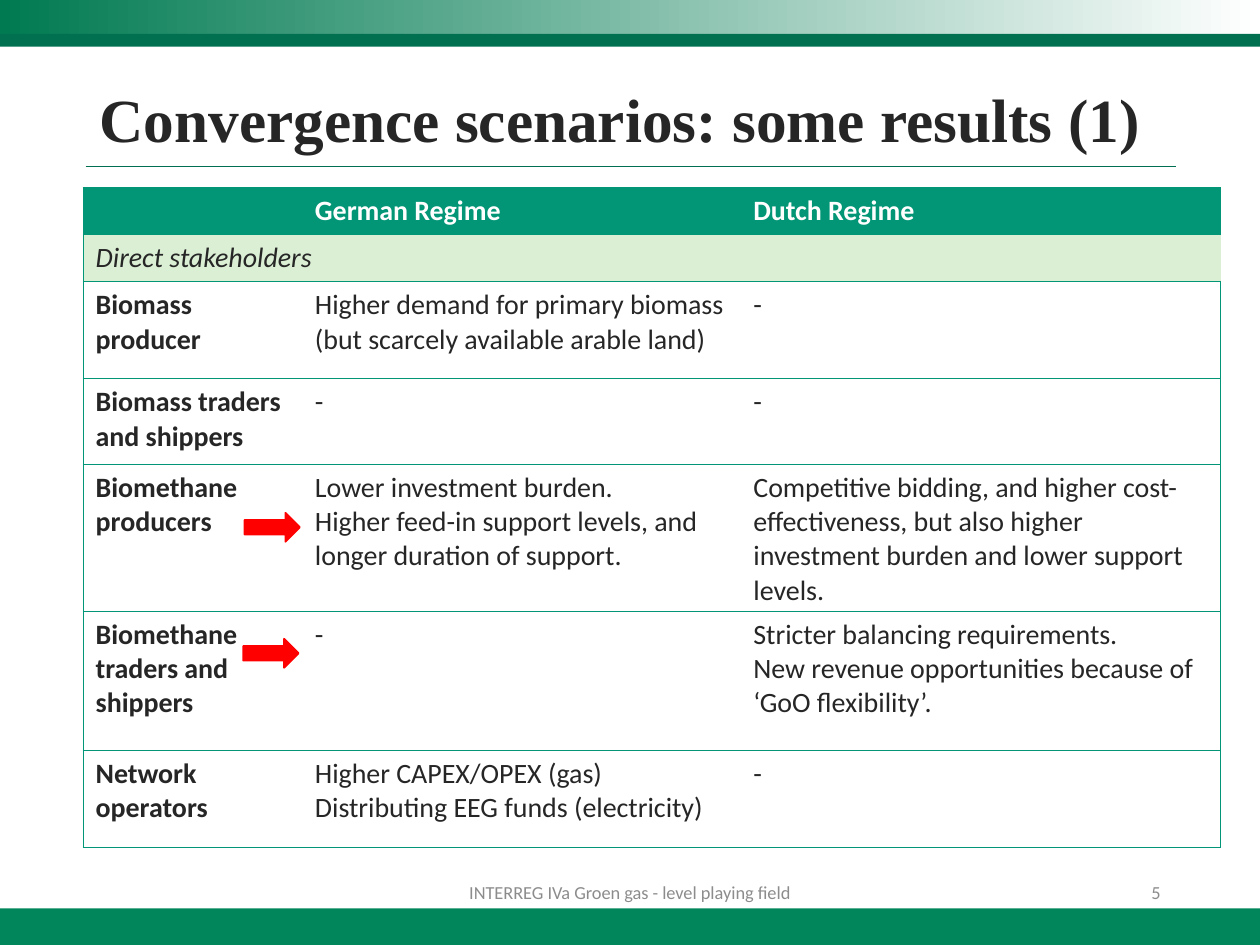
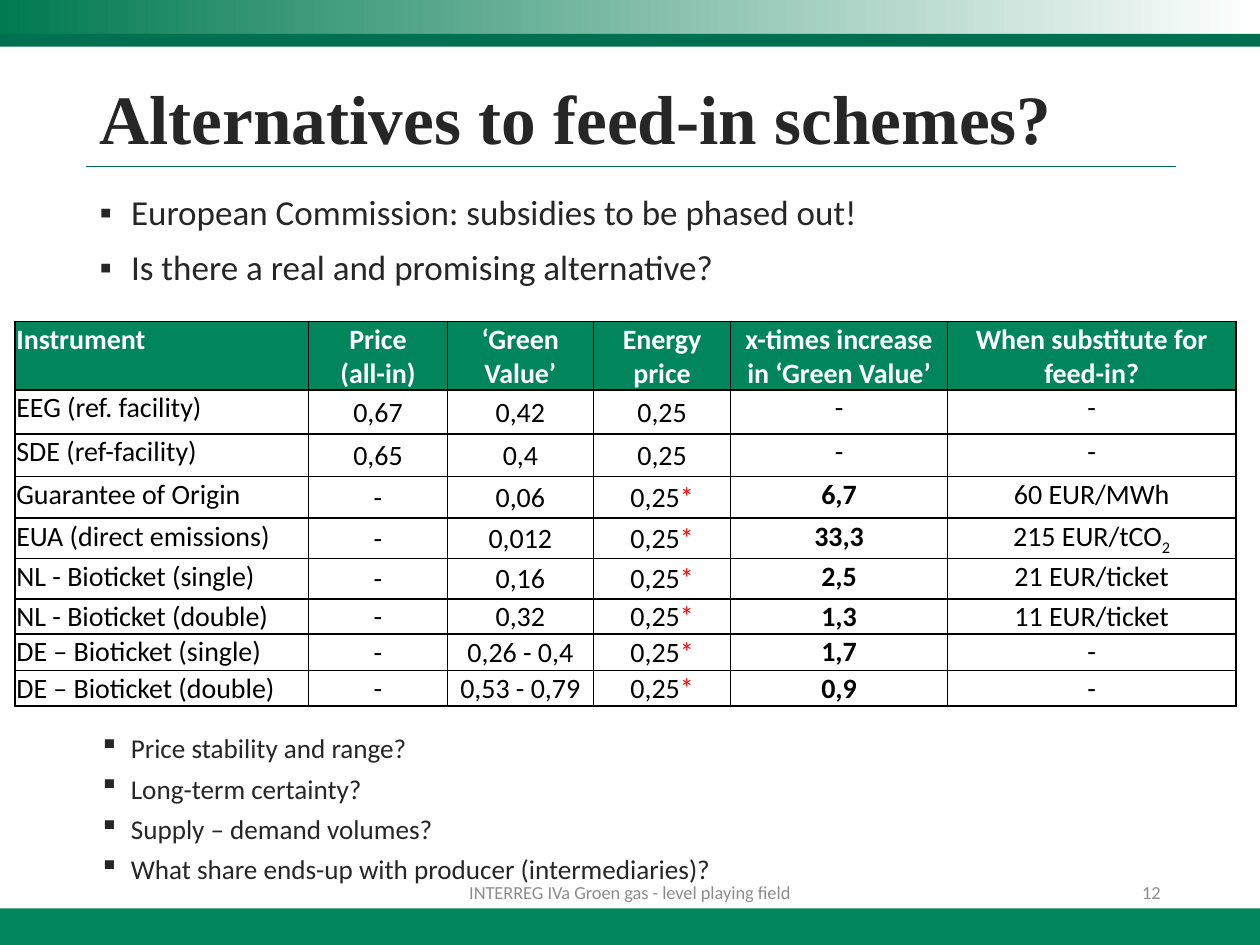
"""Builds two slides on convergence scenarios and alternatives to feed-in schemes."""
from dataclasses import dataclass

from lxml.etree import SubElement
from pptx import Presentation
from pptx.dml.color import RGBColor
from pptx.enum.shapes import MSO_CONNECTOR, MSO_SHAPE
from pptx.enum.text import MSO_ANCHOR, MSO_AUTO_SIZE, PP_ALIGN
from pptx.oxml.ns import qn
from pptx.util import Inches, Pt


@dataclass(frozen=True)
class Theme:
    heading_font: str = "Times New Roman"
    text_font: str = "Calibri"
    ink: str = "262626"
    black: str = "000000"
    white: str = "FFFFFF"
    muted: str = "8C8C8C"
    accent: str = "FF0000"
    green: str = "00865A"
    deep_green: str = "007051"
    fade_green: str = "007A51"
    teal: str = "029676"
    pale_green: str = "DBEFD4"
    table_size: float = 16
    footer_size: float = 10.5
    list_size: float = 20
    small_list_size: float = 15.5


THEME = Theme()
COLUMNS, ROWS = 100, 75
PLAIN_TABLE = "{2D5ABB26-0587-4C30-8999-92F81FD0307C}"
FOOTER = "INTERREG IVa Groen gas - level playing field"

REGIMES = [
    ["", "German Regime", "Dutch Regime"],
    ["Direct stakeholders", "", ""],
    ["Biomass producer", "Higher demand for primary biomass (but scarcely available arable land)", "-"],
    ["Biomass traders and shippers", "-", "-"],
    ["Biomethane producers",
     "Lower investment burden.\vHigher feed-in support levels, and longer duration of support.",
     "Competitive bidding, and higher cost-effectiveness, but also higher investment burden "
     "and lower support levels."],
    ["Biomethane traders and shippers", "-",
     "Stricter balancing requirements.\vNew revenue opportunities because of ‘GoO flexibility’."],
    ["Network operators", "Higher CAPEX/OPEX (gas)\nDistributing EEG funds (electricity)", "-"],
]

INSTRUMENTS = [
    ["Instrument", "Price\n(all-in)", "‘Green Value’", "Energy price",
     "x-times increase in ‘Green Value’", "When substitute for feed-in?"],
    ["EEG (ref. facility)", "0,67", "0,42", "0,25", "-", "-"],
    ["SDE (ref-facility)", "0,65", "0,4", "0,25", "-", "-"],
    ["Guarantee of Origin", "-", "0,06", "0,25", "6,7", "60 EUR/MWh"],
    ["EUA (direct emissions)", "-", "0,012", "0,25", "33,3", "215 EUR/tCO"],
    ["NL - Bioticket (single)", "-", "0,16", "0,25", "2,5", "21 EUR/ticket"],
    ["NL - Bioticket (double)", "-", "0,32", "0,25", "1,3", "11 EUR/ticket"],
    ["DE – Bioticket (single)", "-", "0,26 - 0,4", "0,25", "1,7", "-"],
    ["DE – Bioticket (double)", "-", "0,53 - 0,79", "0,25", "0,9", "-"],
]


class Deck:
    def __init__(self, theme):
        self.theme = theme
        self.file = Presentation()
        self.file.slide_width, self.file.slide_height = Inches(10), Inches(7.5)
        self.slide = None

    def x(self, columns):
        return round(self.file.slide_width * columns / COLUMNS)

    def y(self, rows):
        return round(self.file.slide_height * rows / ROWS)

    def box(self, left, top, width, height):
        return self.x(left), self.y(top), self.x(width), self.y(height)

    def style(self, paragraph, size, color, bold=False, italic=False, font=None, align=PP_ALIGN.LEFT):
        paragraph.alignment = align
        face = paragraph.font
        face.name, face.size = font or self.theme.text_font, Pt(size)
        face.bold, face.italic = bold, italic
        face.color.rgb = RGBColor.from_string(color)

    def start(self, layout, heading, heading_size, number):
        self.slide = self.file.slides.add_slide(self.file.slide_layouts[layout])
        self.bands()
        title = self.slide.shapes.title
        title.left, title.top, title.width, title.height = self.box(6.9, 6.2, 86.2, 7)
        frame = title.text_frame
        frame.text = heading
        frame.auto_size, frame.vertical_anchor = MSO_AUTO_SIZE.NONE, MSO_ANCHOR.MIDDLE
        frame.paragraphs[0].line_spacing = 0.9
        self.style(frame.paragraphs[0], heading_size, self.theme.ink, bold=True, font=self.theme.heading_font)
        self.footer(FOOTER, 33.1, 33.8, PP_ALIGN.CENTER)
        self.footer(number, 70.6, 22.5, PP_ALIGN.RIGHT)

    def bands(self):
        theme = self.theme
        self.shape(MSO_SHAPE.RECTANGLE, (0, 72.1, 100, 2.9), theme.green)
        fade = self.shape(MSO_SHAPE.RECTANGLE, (0, 0, 100, 2.9), theme.white).fill
        fade.gradient()
        fade.gradient_angle = 0
        for stop, color in zip(fade.gradient_stops, (theme.fade_green, theme.white)):
            stop.color.rgb = RGBColor.from_string(color)
        self.shape(MSO_SHAPE.RECTANGLE, (0, 2.7, 100, 1), theme.deep_green)
        self.rule(6.8, 93.3, 13.2)

    def shape(self, preset, place, color, outline=None):
        shape = self.slide.shapes.add_shape(preset, *self.box(*place))
        shape.shadow.inherit = False
        shape.fill.solid()
        shape.fill.fore_color.rgb = RGBColor.from_string(color)
        if outline:
            shape.line.color.rgb = RGBColor.from_string(color)
            shape.line.width = Pt(outline)
        else:
            shape.line.fill.background()
        return shape

    def rule(self, start, end, row):
        line = self.slide.shapes.add_connector(
            MSO_CONNECTOR.STRAIGHT, self.x(start), self.y(row), self.x(end), self.y(row))
        line.line.color.rgb = RGBColor.from_string(self.theme.deep_green)
        line.line.width = Pt(0.5)
        SubElement(line._element.spPr, qn("a:effectLst"))

    def text_box(self, place):
        frame = self.slide.shapes.add_textbox(*self.box(*place)).text_frame
        frame.word_wrap = True
        return frame

    def footer(self, text, left, width, align):
        frame = self.text_box((left, 69.5, width, 2.6))
        frame.text, frame.vertical_anchor = text, MSO_ANCHOR.MIDDLE
        self.style(frame.paragraphs[0], self.theme.footer_size, self.theme.muted, align=align)

    def body(self, place):
        body = self.slide.placeholders[1]
        body.left, body.top, body.width, body.height = self.box(*place)
        return body.text_frame

    def bullets(self, frame, items, size, spacing):
        frame.text = "\n".join(items)
        frame.auto_size = MSO_AUTO_SIZE.NONE
        for paragraph in frame.paragraphs:
            paragraph.line_spacing, paragraph.space_before = spacing, Pt(10)
            self.style(paragraph, size, self.theme.ink)
            properties = paragraph._p.get_or_add_pPr()
            properties.set("marL", str(Inches(0.25)))
            properties.set("indent", str(-Inches(0.25)))
            bullet = properties.makeelement(qn("a:buChar"), {"char": "▪"})
            properties.find(qn("a:defRPr")).addprevious(bullet)

    def borders(self, cell, sides, color, width):
        properties = cell._tc.get_or_add_tcPr()
        for side in "LRTB":
            if side in sides:
                line = SubElement(properties, qn(f"a:ln{side}"), w=str(Pt(width)))
                SubElement(SubElement(line, qn("a:solidFill")), qn("a:srgbClr"), val=color)

    def table(self, content, left, top, widths, heights, look, border, insets=None):
        place = self.box(left, top, sum(widths), sum(heights))
        table = self.slide.shapes.add_table(len(content), len(widths), *place).table
        table._tbl.tblPr.find(qn("a:tableStyleId")).text = PLAIN_TABLE
        table.horz_banding = False
        for column, width in zip(table.columns, widths):
            column.width = self.x(width)
        for r, texts in enumerate(content):
            table.rows[r].height = self.y(heights[r])
            for c, text in enumerate(texts):
                sides, fill, anchor, font = look(r, c)
                cell = table.cell(r, c)
                cell.text, cell.vertical_anchor = text, anchor
                if insets:
                    cell.margin_left, cell.margin_right, cell.margin_top, cell.margin_bottom = insets
                self.borders(cell, sides, *border)
                if fill:
                    cell.fill.solid()
                    cell.fill.fore_color.rgb = RGBColor.from_string(fill)
                else:
                    cell.fill.background()
                for paragraph in cell.text_frame.paragraphs:
                    self.style(paragraph, self.theme.table_size, **font)
        return table

    def tail(self, cell, text, color=None, baseline=None):
        run = cell.text_frame.paragraphs[0].add_run()
        run.text = text
        if color:
            run.font.color.rgb = RGBColor.from_string(color)
        if baseline:
            run.font._element.set("baseline", str(baseline * 1000))


def regime_look(row, column):
    sides = "TB" + {0: "L", 2: "R"}.get(column, "")
    fill = {0: THEME.teal, 1: THEME.pale_green}.get(row)
    anchor = MSO_ANCHOR.MIDDLE if row == 1 else MSO_ANCHOR.TOP
    font = {"color": THEME.ink if row else THEME.white,
            "bold": row == 0 or (column == 0 and row > 1), "italic": row == 1}
    return sides, fill, anchor, font


def instrument_look(row, column):
    anchor = MSO_ANCHOR.MIDDLE if row and column in (1, 2, 3) else MSO_ANCHOR.TOP
    font = {"color": THEME.black if row else THEME.white,
            "bold": row == 0 or (column == 4 and row > 2),
            "align": PP_ALIGN.CENTER if column else PP_ALIGN.LEFT}
    return "LRTB", None if row else THEME.green, anchor, font


def convergence_slide(deck):
    deck.start(5, "Convergence scenarios: some results (1)", 35, "5")
    regimes = deck.table(REGIMES, 6.6, 14.9, [17.4, 34.8, 38.1],
                         [2.8, 3.8, 7.7, 6.8, 9.4, 11, 7.7], regime_look, (THEME.teal, 0.5))
    regimes.cell(1, 0).merge(regimes.cell(1, 2))
    for left, top in ((19.4, 40.7), (19.3, 50.7)):
        deck.shape(MSO_SHAPE.RIGHT_ARROW, (left, top, 4.4, 2.3), THEME.accent, outline=1)


def alternatives_slide(deck):
    deck.start(1, "Alternatives to feed-in schemes?", 39.6, "12")
    deck.bullets(deck.body((6.9, 15, 86.2, 10.3)),
                 ["European Commission: subsidies to be phased out!",
                  "Is there a real and promising alternative?"], THEME.list_size, 0.9)
    instruments = deck.table(INSTRUMENTS, 1.2, 25.5, [23.3, 11, 11.6, 10.9, 17.2, 22.9],
                             [4.8, 3.5, 3.4, 3.3, 3.2, 3.2, 2.8, 2.9, 2.8], instrument_look,
                             (THEME.black, 1), [Inches(0.01)] * 3 + [0])
    for row in range(3, len(INSTRUMENTS)):
        deck.tail(instruments.cell(row, 3), "*", color=THEME.accent)
    deck.tail(instruments.cell(4, 5), "2", baseline=-25)
    deck.bullets(deck.text_box((6.9, 58.3, 86.2, 12.7)),
                 ["Price stability and range?", "Long-term certainty?", "Supply – demand volumes?",
                  "What share ends-up with producer (intermediaries)?"], THEME.small_list_size, 0.7)


def main():
    deck = Deck(THEME)
    convergence_slide(deck)
    alternatives_slide(deck)
    deck.file.save("out.pptx")


if __name__ == "__main__":
    main()
